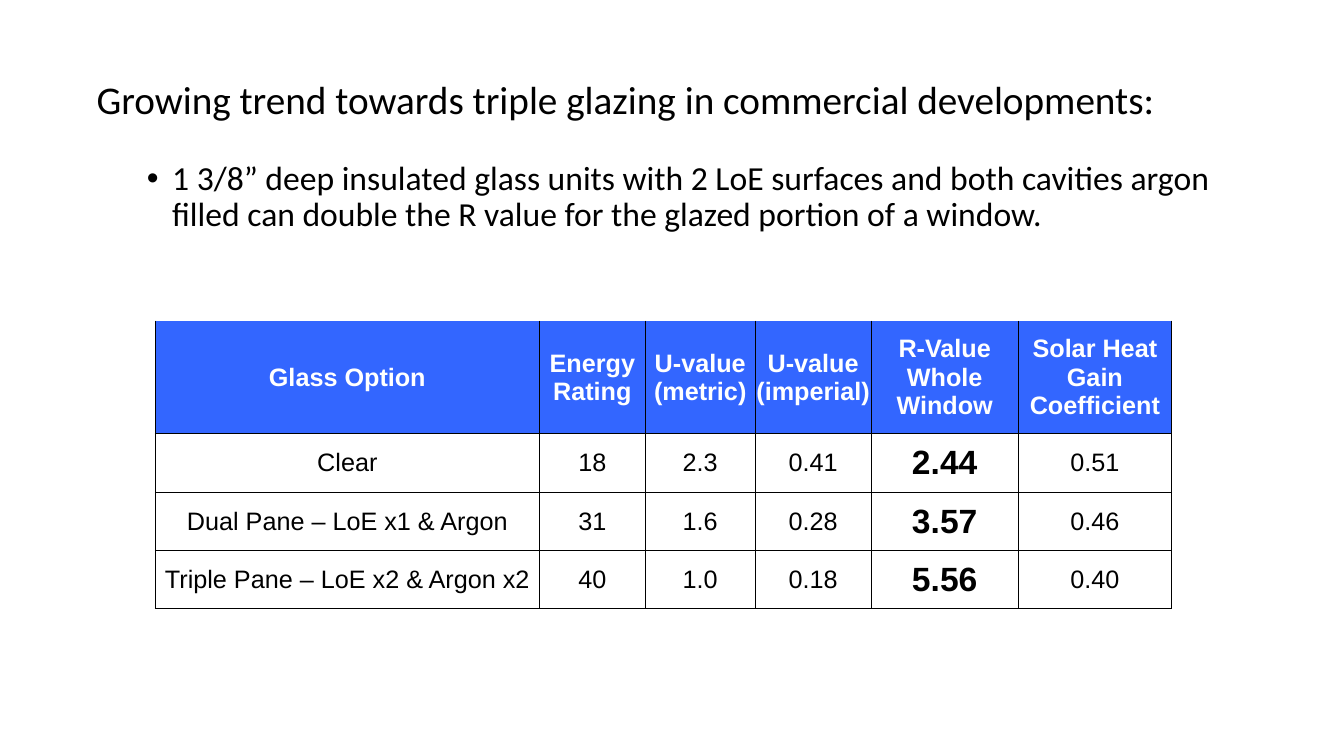
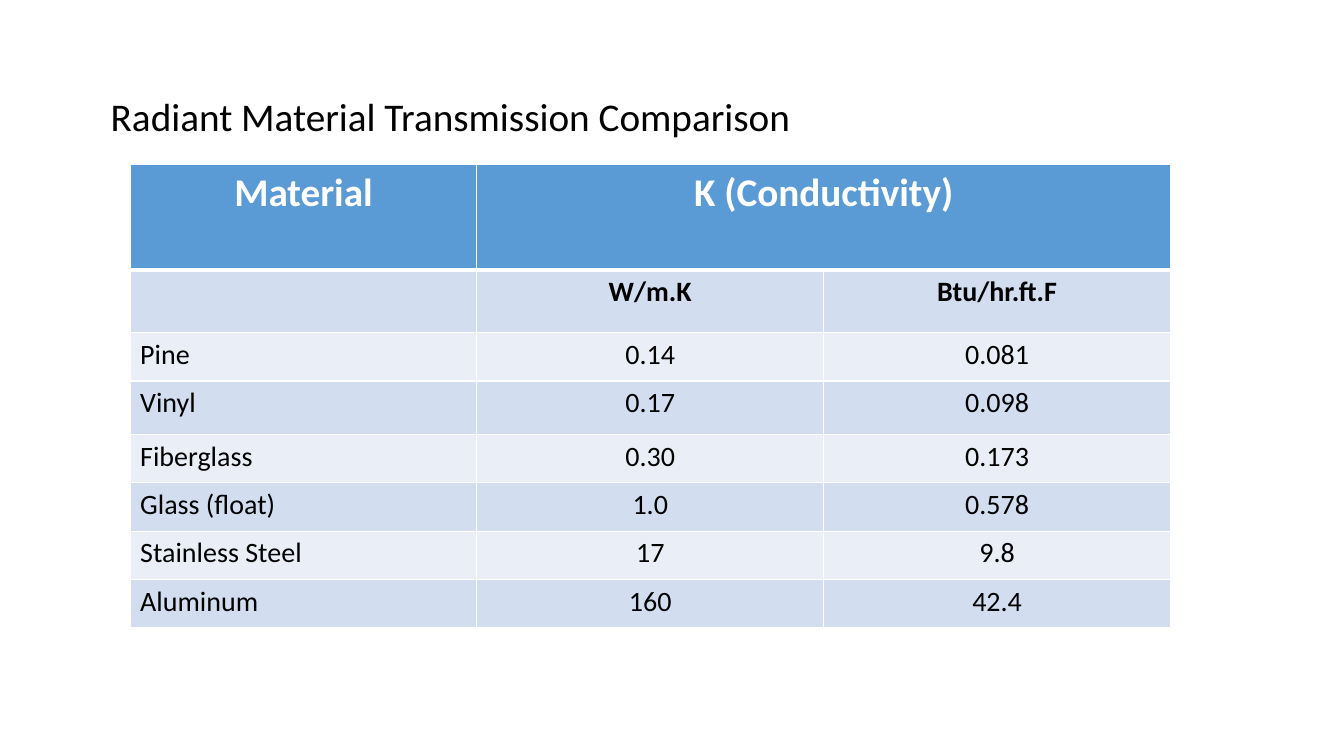
"""Build two slides comparing glazing options and material conductivity."""
from lxml import etree
from pptx import Presentation
from pptx import util as u
from pptx.dml.color import RGBColor
from pptx.enum import text
from pptx.oxml.ns import qn

BLACK, WHITE = "000000", "FFFFFF"
HEADER_BLUE, TABLE_BLUE = "3366FF", "5B9BD5"
BANDS = ("D2DEEF", "EAEFF7")
BODY_FONT, GLASS_FONT = "Calibri", "Arial"
TITLE_SIZE = 28

GLASS_TITLE = "Growing trend towards triple glazing in commercial developments:"
GLASS_POINT = (
    "1 3/8” deep insulated glass units with 2 LoE surfaces and both cavities "
    "argon filled can double the R value for the glazed portion of a window."
)
GLASS_ROWS = [
    ("Glass Option", "Energy Rating", "U-value (metric)", "U-value (imperial)",
     "R-Value\nWhole Window", "Solar Heat Gain Coefficient"),
    ("Clear", "18", "2.3", "0.41", "2.44", "0.51"),
    ("Dual Pane – LoE x1 & Argon", "31", "1.6", "0.28", "3.57", "0.46"),
    ("Triple Pane – LoE x2 & Argon x2", "40", "1.0", "0.18", "5.56", "0.40"),
]
GLASS_WIDTHS = (3.81, 1.05, 1.09, 1.15, 1.46, 1.52)
GLASS_HEIGHTS = (1.12, 0.58, 0.58, 0.58)
R_VALUE_COLUMN = 4

MATERIAL_TITLE = "Radiant Material Transmission Comparison"
MATERIAL_ROWS = [
    ("Material", "K (Conductivity)", ""),
    ("", "W/m.K", "Btu/hr.ft.F"),
    ("Pine", "0.14", "0.081"),
    ("Vinyl", "0.17", "0.098"),
    ("Fiberglass", "0.30", "0.173"),
    ("Glass (float)", "1.0", "0.578"),
    ("Stainless Steel", "17", "9.8"),
    ("Aluminum", "160", "42.4"),
]
MATERIAL_WIDTHS = (3.44,) * 3
MATERIAL_HEIGHTS = (1.05, 0.62, 0.48, 0.53, 0.48, 0.48, 0.48, 0.48)


def rgb(color):
    return RGBColor.from_string(color)


def style(p, size, color=BLACK, bold=False, font=BODY_FONT):
    for r in p.runs:
        r.font.name = font
        r.font.size = u.Pt(size)
        r.font.bold = bold
        r.font.color.rgb = rgb(color)


def add_text(slide, box, lines, anchor):
    tf = slide.shapes.add_textbox(*map(u.Inches, box)).text_frame
    tf.word_wrap = True
    tf.vertical_anchor = anchor
    tf.text = "\n".join(lines)
    for p in tf.paragraphs:
        p.line_spacing = 0.9
    style(tf.paragraphs[0], TITLE_SIZE)
    return tf


def add_bullet(p):
    pPr = p._p.get_or_add_pPr()
    pPr.set("marL", str(u.Inches(0.75)))
    pPr.set("indent", str(u.Inches(-0.25)))
    etree.SubElement(pPr, qn("a:buFont")).set("typeface", "Arial")
    etree.SubElement(pPr, qn("a:buChar")).set("char", "•")


def set_borders(cell, color, widths):
    tcPr = cell._tc.get_or_add_tcPr()
    for side, width in zip("LRTB", widths):
        ln = etree.SubElement(tcPr, qn(f"a:ln{side}"), w=str(u.Pt(width)))
        if width:
            fill = etree.SubElement(ln, qn("a:solidFill"))
            etree.SubElement(fill, qn("a:srgbClr"), val=color)
        else:
            etree.SubElement(ln, qn("a:noFill"))


def add_table(slide, left, top, rows, widths, heights, format_cell):
    size = map(u.Inches, (left, top, sum(widths), sum(heights)))
    table = slide.shapes.add_table(len(rows), len(widths), *size).table
    table.first_row = table.horz_banding = False
    for column, width in zip(table.columns, widths):
        column.width = u.Inches(width)
    for row, height in zip(table.rows, heights):
        row.height = u.Inches(height)
    for i, values in enumerate(rows):
        for j, value in enumerate(values):
            cell = table.cell(i, j)
            cell.text = value
            format_cell(cell, i, j)
    return table


def fill_cell(cell, color):
    cell.fill.solid()
    cell.fill.fore_color.rgb = rgb(color)


def format_glass(cell, i, j):
    header = i == 0
    big = j == R_VALUE_COLUMN and not header
    set_borders(cell, BLACK, (0.5, 0.5, 0 if header else 0.5, 0.5))
    fill_cell(cell, HEADER_BLUE if header else WHITE)
    cell.vertical_anchor = text.MSO_ANCHOR.MIDDLE
    cell.margin_left = cell.margin_right = cell.margin_top = u.Inches(0.01)
    cell.margin_bottom = 0
    for p in cell.text_frame.paragraphs:
        p.alignment = text.PP_ALIGN.CENTER
        style(p, 24 if big else 18, WHITE if header else BLACK,
              header or big, GLASS_FONT)


def format_material(cell, i, j):
    header = i == 0
    set_borders(cell, WHITE, (1, 1, 3 if i == 1 else 1, 3 if header else 1))
    fill_cell(cell, TABLE_BLUE if header else BANDS[(i - 1) % 2])
    p = cell.text_frame.paragraphs[0]
    if header or j:
        p.alignment = text.PP_ALIGN.CENTER
    style(p, 28 if header else 20, WHITE if header else BLACK, i < 2)


def glass_slide(slide):
    tf = add_text(slide, (0.86, 0.75, 11.5, 5.02), (GLASS_TITLE, GLASS_POINT),
                  text.MSO_ANCHOR.TOP)
    p = tf.paragraphs[1]
    p.space_before = u.Pt(27.5)
    add_bullet(p)
    style(p, 24)
    add_table(slide, 1.54, 3.18, GLASS_ROWS, GLASS_WIDTHS, GLASS_HEIGHTS,
              format_glass)


def material_slide(slide):
    add_text(slide, (1, 0.73, 11.5, 0.9), (MATERIAL_TITLE,),
             text.MSO_ANCHOR.MIDDLE)
    table = add_table(slide, 1.29, 1.63, MATERIAL_ROWS, MATERIAL_WIDTHS,
                      MATERIAL_HEIGHTS, format_material)
    table.cell(0, 1).merge(table.cell(0, 2))


def main():
    prs = Presentation()
    prs.slide_width, prs.slide_height = u.Inches(13.33), u.Inches(7.5)
    for build in (glass_slide, material_slide):
        build(prs.slides.add_slide(prs.slide_layouts[6]))
    prs.save("out.pptx")


if __name__ == "__main__":
    main()
